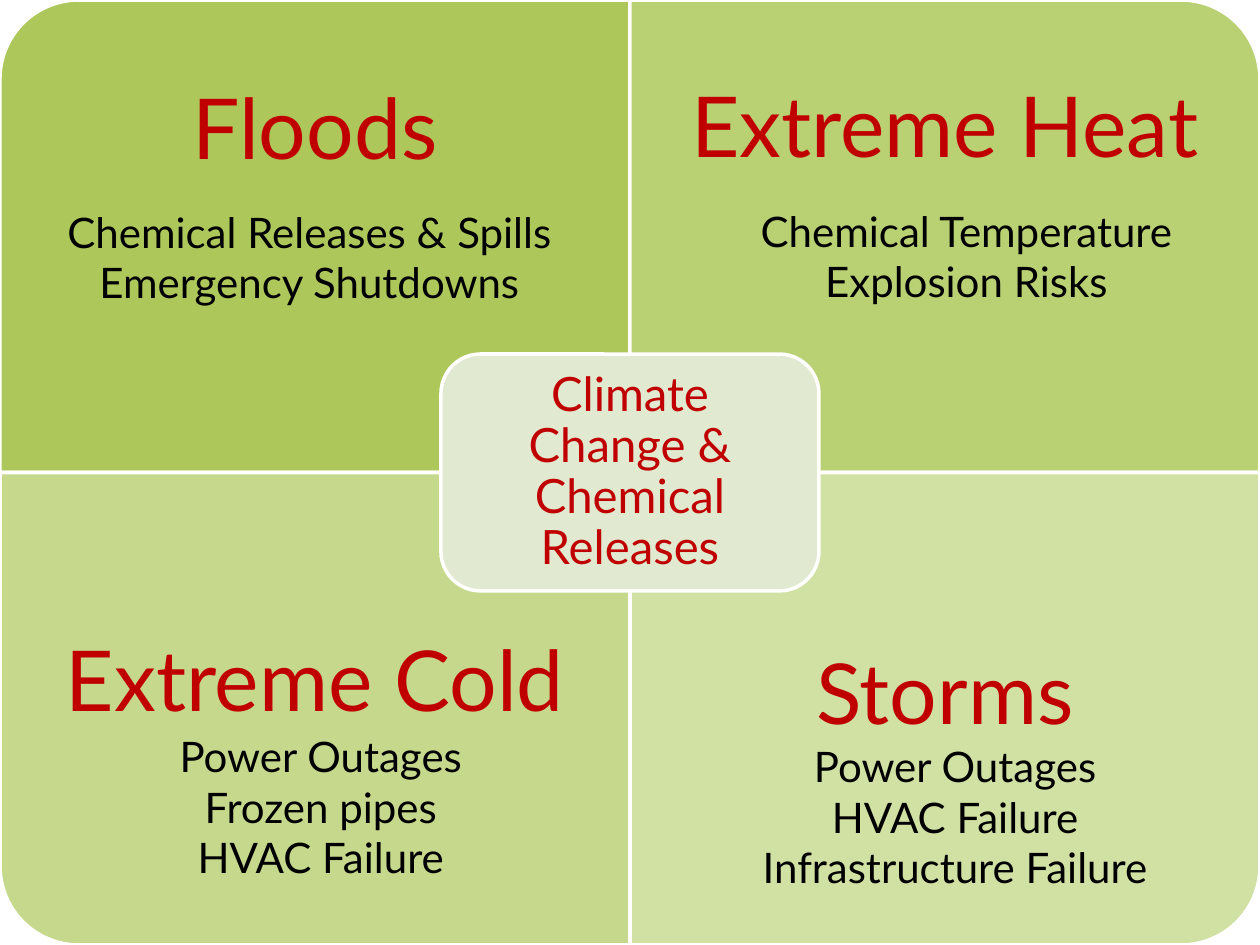
from lxml.etree import SubElement
from pptx import Presentation
from pptx.dml.color import RGBColor
from pptx.enum.shapes import MSO_SHAPE
from pptx.enum.text import MSO_ANCHOR, PP_ALIGN
from pptx.oxml.ns import qn
from pptx.util import Pt

PX = 9144  # 100 px to the inch
SLIDE_W, SLIDE_H = 1000, 750
CELL_W, CELL_H = SLIDE_W // 2, SLIDE_H // 2
HEADING_H = 90

GREEN = RGBColor(0xA5, 0xC2, 0x49)
PALE = RGBColor(0xE1, 0xE9, 0xD0)
WHITE = RGBColor(0xFF, 0xFF, 0xFF)
RED = RGBColor(0xC0, 0x00, 0x00)
BLACK = RGBColor(0x00, 0x00, 0x00)

HEADING = {"name": "Lato", "size": Pt(48)}
HUB = {"name": "Lato", "size": Pt(27)}
BODY = {"name": "Lato", "size": Pt(24)}

# Column, row, corner rotation, opacity in %, heading, heading top,
# hazards, box of the hazards; places are relative to the quadrant
QUADRANTS = [
    (0, 0, 270, 90, "Floods", 55,
     ["Chemical Releases & Spills", "Emergency Shutdowns"], (33, 159, 425, 91)),
    (1, 0, 0, 77, "Extreme Heat", 53,
     ["Chemical Temperature", "Explosion Risks"], (67, 158, 400, 91)),
    (0, 1, 180, 63, "Extreme Cold", 118,
     ["Power Outages", "Frozen pipes", "HVAC Failure"], (92, 200, 325, 131)),
    (1, 1, 90, 50, "Storms", 128,
     ["Power Outages", "HVAC Failure", "Infrastructure Failure"],
     (33, 208, 450, 131)),
]


def emu(*lengths):
    return [round(length * PX) for length in lengths]


def write(frame, lines, font_format, color, anchor=MSO_ANCHOR.TOP, spacing=None):
    frame.word_wrap = True
    frame.vertical_anchor = anchor
    for number, line in enumerate(lines):
        paragraph = frame.paragraphs[0] if number == 0 else frame.add_paragraph()
        paragraph.alignment = PP_ALIGN.CENTER
        paragraph.line_spacing = spacing
        run = paragraph.add_run()
        run.text = line
        run.font.color.rgb = color
        for attribute, value in font_format.items():
            setattr(run.font, attribute, value)


def add_panel(slide, preset, box, color, opacity=100):
    panel = slide.shapes.add_shape(preset, *emu(*box))
    panel.shadow.inherit = False
    panel.fill.solid()
    panel.fill.fore_color.rgb = color
    if opacity < 100:
        rgb = panel.fill._xPr.find(".//" + qn("a:srgbClr"))
        SubElement(rgb, qn("a:alpha"), val=str(opacity * 1000))
    panel.line.color.rgb = WHITE
    panel.line.width = Pt(2)
    return panel


def add_quadrant(slide, box, rotation, opacity, heading, heading_top,
                 hazards, hazards_box):
    left, top, width, height = box

    # Panel: a quarter turn swaps its sides around the same centre
    turned = rotation % 180 != 0
    w, h = (height, width) if turned else (width, height)
    panel_box = (left + (width - w) / 2, top + (height - h) / 2, w, h)
    panel = add_panel(slide, MSO_SHAPE.ROUND_1_RECTANGLE, panel_box, GREEN, opacity)
    panel.rotation = rotation

    # Heading
    title = slide.shapes.add_textbox(*emu(left, top + heading_top, width, HEADING_H))
    write(title.text_frame, [heading], HEADING, RED, MSO_ANCHOR.MIDDLE)

    # Hazards
    x, y, w, h = hazards_box
    details = slide.shapes.add_textbox(*emu(left + x, top + y, w, h))
    write(details.text_frame, hazards, BODY, BLACK)


def add_hub(slide, box):
    hub = add_panel(slide, MSO_SHAPE.ROUNDED_RECTANGLE, box, PALE)
    frame = hub.text_frame
    frame.margin_left, frame.margin_right = emu(50, 50)
    write(frame, ["Climate Change & Chemical Releases"], HUB, RED,
          MSO_ANCHOR.MIDDLE, 0.9)


def main():
    deck = Presentation()
    deck.slide_width, deck.slide_height = emu(SLIDE_W, SLIDE_H)
    slide = deck.slides.add_slide(deck.slide_layouts[6])

    for column, row, *content in QUADRANTS:
        box = (column * CELL_W, row * CELL_H, CELL_W, CELL_H)
        add_quadrant(slide, box, *content)

    # Hub, centred over the four quadrants
    hub_w, hub_h = 300, 188
    add_hub(slide, ((SLIDE_W - hub_w) / 2, (SLIDE_H - hub_h) / 2, hub_w, hub_h))
    deck.save("out.pptx")


if __name__ == "__main__":
    main()
